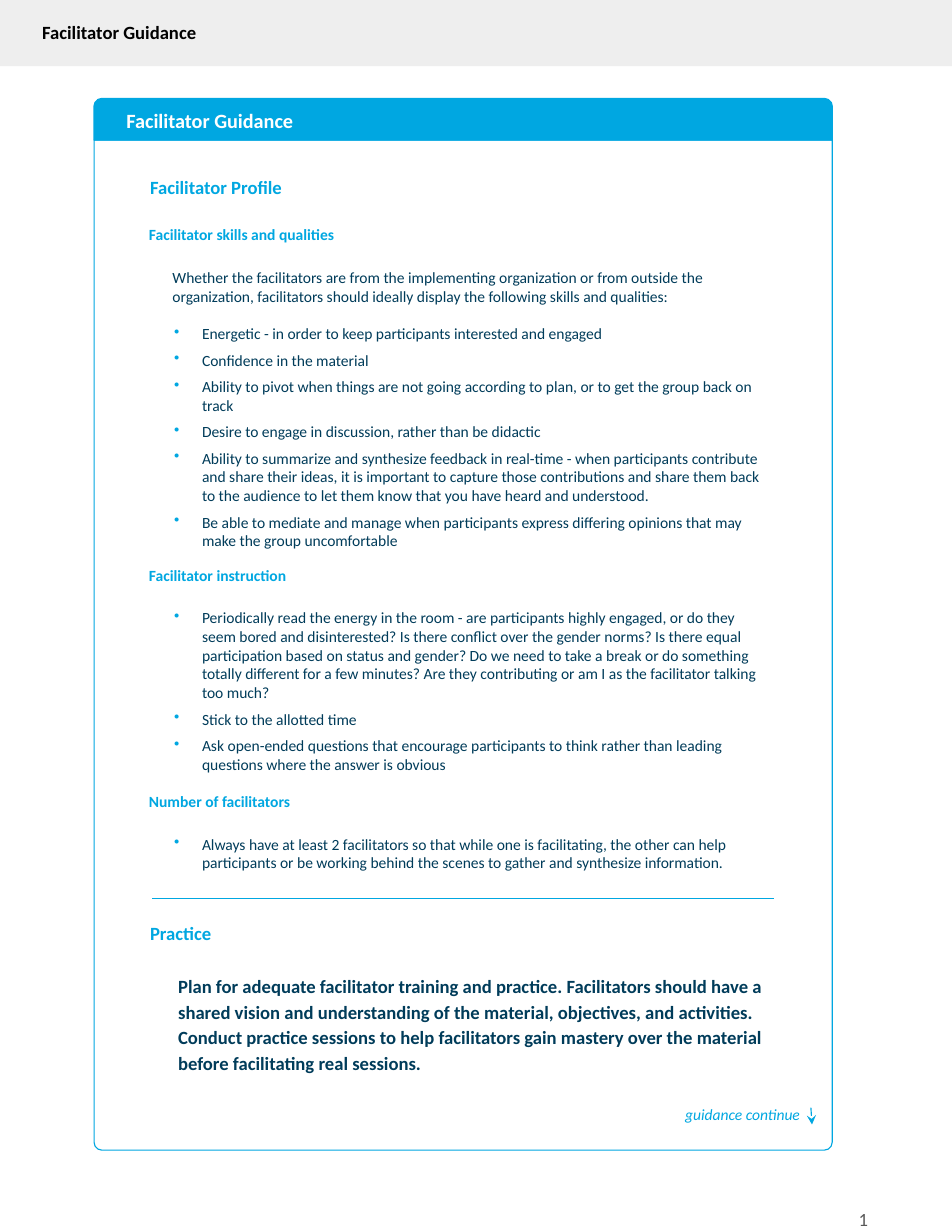
from lxml.etree import SubElement
from pptx import Presentation
from pptx.dml.color import RGBColor
from pptx.enum.shapes import MSO_CONNECTOR, MSO_SHAPE
from pptx.enum.text import MSO_ANCHOR, PP_ALIGN
from pptx.oxml.ns import qn
from pptx.util import Pt

BLUE, NAVY, WHITE, BLACK = "00A7E1", "003C5A", "FFFFFF", "000000"
BAND_GRAY, NUMBER_GRAY = "EEEEEE", "595959"
FONT = "Calibri"
HEADING_LEFT, BODY_LEFT, BODY_WIDTH = 95.8, 110.9, 382.3
PANEL_LEFT, PANEL_WIDTH, PANEL_RADIUS = 60.5, 474.5, 5
BANNER_TOP, BANNER_BOTTOM, PANEL_BOTTOM = 63.4, 90, 739.4

INTRO = ("Whether the facilitators are from the implementing organization or from outside the "
         "organization, facilitators should ideally display the following skills and qualities:")
SKILLS = [
    "Energetic - in order to keep participants interested and engaged",
    "Confidence in the material",
    "Ability to pivot when things are not going according to plan, or to get the group back on track",
    "Desire to engage in discussion, rather than be didactic",
    "Ability to summarize and synthesize feedback in real-time - when participants contribute and "
    "share their ideas, it is important to capture those contributions and share them back to the "
    "audience to let them know that you have heard and understood.",
    "Be able to mediate and manage when participants express differing opinions that may make the "
    "group uncomfortable",
]
INSTRUCTIONS = [
    "Periodically read the energy in the room - are participants highly engaged, or do they seem "
    "bored and disinterested? Is there conflict over the gender norms? Is there equal participation "
    "based on status and gender? Do we need to take a break or do something totally different for a "
    "few minutes? Are they contributing or am I as the facilitator talking too much?",
    "Stick to the allotted time",
    "Ask open-ended questions that encourage participants to think rather than leading questions "
    "where the answer is obvious",
]
STAFFING = [
    "Always have at least 2 facilitators so that while one is facilitating, the other can help "
    "participants or be working behind the scenes to gather and synthesize information.",
]
PRACTICE = ("Plan for adequate facilitator training and practice. Facilitators should have a shared "
            "vision and understanding of the material, objectives, and activities. Conduct practice "
            "sessions to help facilitators gain mastery over the material before facilitating real "
            "sessions.")


def color(hex_code):
    """Turn a hex string into a colour."""
    return RGBColor.from_string(hex_code)


def add_block(slide, kind, left, top, width, height, fill=None, line=None, weight=0.75, corners=()):
    """Add a preset shape with optional fill, outline and corner radii."""
    block = slide.shapes.add_shape(kind, Pt(left), Pt(top), Pt(width), Pt(height))
    block.shadow.inherit = False
    for index, radius in enumerate(corners):
        block.adjustments[index] = radius / min(width, height)
    if fill:
        block.fill.solid()
        block.fill.fore_color.rgb = color(fill)
    else:
        block.fill.background()
    if line:
        block.line.color.rgb = color(line)
        block.line.width = Pt(weight)
    else:
        block.line.fill.background()


def add_rule(slide, start, end, arrow=False):
    """Add a thin blue line, with an arrowhead at its end if asked."""
    rule = slide.shapes.add_connector(MSO_CONNECTOR.STRAIGHT, *map(Pt, start + end))
    rule.line.color.rgb = color(BLUE)
    rule.line.width = Pt(0.75)
    if arrow:
        SubElement(rule.line._get_or_add_ln(), qn("a:tailEnd"), type="stealth")
    SubElement(rule._element.spPr, qn("a:effectLst"))


def add_text(slide, texts, left, top, width, height, size, ink, bold=False, italic=False,
             align=PP_ALIGN.LEFT, anchor=MSO_ANCHOR.TOP, padded=False):
    """Add a wrapped text box and return its paragraphs."""
    frame = slide.shapes.add_textbox(Pt(left), Pt(top), Pt(width), Pt(height)).text_frame
    frame.word_wrap = True
    frame.vertical_anchor = anchor
    inset = 7.2 if padded else 0
    frame.margin_left = frame.margin_right = frame.margin_bottom = Pt(inset)
    frame.margin_top = Pt(inset or 0.9)
    frame.text = "\n".join(texts)
    for paragraph in frame.paragraphs:
        paragraph.alignment = align
        for run in paragraph.runs:
            run.font.name = FONT
            run.font.size = Pt(size)
            run.font.bold = bold
            run.font.italic = italic
            run.font.color.rgb = color(ink)
    return frame.paragraphs


def add_bullet(paragraph):
    """Give a paragraph a hanging blue bullet."""
    properties = paragraph._p.get_or_add_pPr()
    properties.set("marL", str(Pt(19)))
    properties.set("indent", str(Pt(-18)))
    bullet_color = SubElement(properties, qn("a:buClr"))
    SubElement(bullet_color, qn("a:srgbClr"), val=BLUE)
    SubElement(properties, qn("a:buChar"), char="•")


def add_section(slide, heading, top, bullets, body_top, body_height, intro=None):
    """Add a blue subheading with its bulleted body."""
    title = add_text(slide, [heading], HEADING_LEFT, top, 127.4, 13, 10, BLUE, bold=True)[0]
    title.space_before = title.space_after = Pt(12)
    lead = [intro] if intro else []
    body = add_text(slide, lead + bullets, BODY_LEFT, body_top, BODY_WIDTH, body_height, 10, NAVY)
    items = body[len(lead):]
    for item in items:
        item.space_before = Pt(5)
    items[0].space_before = Pt(12 if intro else 0)
    items[-1].space_after = Pt(5)
    for item in items:
        add_bullet(item)
    if intro:
        body[0].space_before = Pt(12)


def add_panel(slide):
    """Add the outlined panel and its blue banner."""
    add_block(slide, MSO_SHAPE.ROUND_2_SAME_RECTANGLE, PANEL_LEFT, BANNER_BOTTOM, PANEL_WIDTH,
              PANEL_BOTTOM - BANNER_BOTTOM, line=BLUE, corners=(0, PANEL_RADIUS))
    add_block(slide, MSO_SHAPE.ROUND_2_SAME_RECTANGLE, PANEL_LEFT, BANNER_TOP, PANEL_WIDTH,
              BANNER_BOTTOM - BANNER_TOP, BLUE, BLUE, 1, corners=(PANEL_RADIUS, 0))
    add_text(slide, ["Facilitator Guidance"], 81.3, 68.4, 347.8, 16.6, 13, WHITE, bold=True)


def main():
    """Build the facilitator guidance page."""
    deck = Presentation()
    deck.slide_width, deck.slide_height = Pt(612), Pt(792)
    slide = deck.slides.add_slide(deck.slide_layouts[6])

    add_panel(slide)
    add_block(slide, MSO_SHAPE.RECTANGLE, 0, -1.4, 612, 43.9, BAND_GRAY)
    add_text(slide, ["Facilitator Guidance"], 0, 6.5, 153.4, 41, 12, BLACK, bold=True,
             align=PP_ALIGN.CENTER, padded=True)

    for heading, top in (("Facilitator Profile", 112.3), ("Practice", 591.8)):
        add_text(slide, [heading], HEADING_LEFT + 0.7, top, 213.8, 15.8, 12, BLUE, bold=True)
    add_section(slide, "Facilitator skills and qualities", 144, SKILLS, 171.4, 183.6, INTRO)
    add_section(slide, "Facilitator instruction", 362.9, INSTRUCTIONS, 390.2, 108)
    add_section(slide, "Number of facilitators", 508.3, STAFFING, 535.7, 25.2)

    add_rule(slide, (97.9, 577.8), (497.5, 577.8))
    practice = add_text(slide, [PRACTICE], 114.5, 623.5, BODY_WIDTH, 65.5, 12, NAVY, bold=True)[0]
    practice.line_spacing = 1.15
    practice.space_before = Pt(9)

    add_text(slide, ["guidance continue"], 433.4, 704.2, 101.5, 26.6, 10, BLUE, italic=True,
             padded=True)
    add_rule(slide, (521.3, 712.1), (522, 722.9), arrow=True)
    add_text(slide, ["1"], 529.2, 752.4, 36, 62.6, 12, NUMBER_GRAY, align=PP_ALIGN.RIGHT,
             anchor=MSO_ANCHOR.MIDDLE, padded=True)
    deck.save("out.pptx")


if __name__ == "__main__":
    main()
